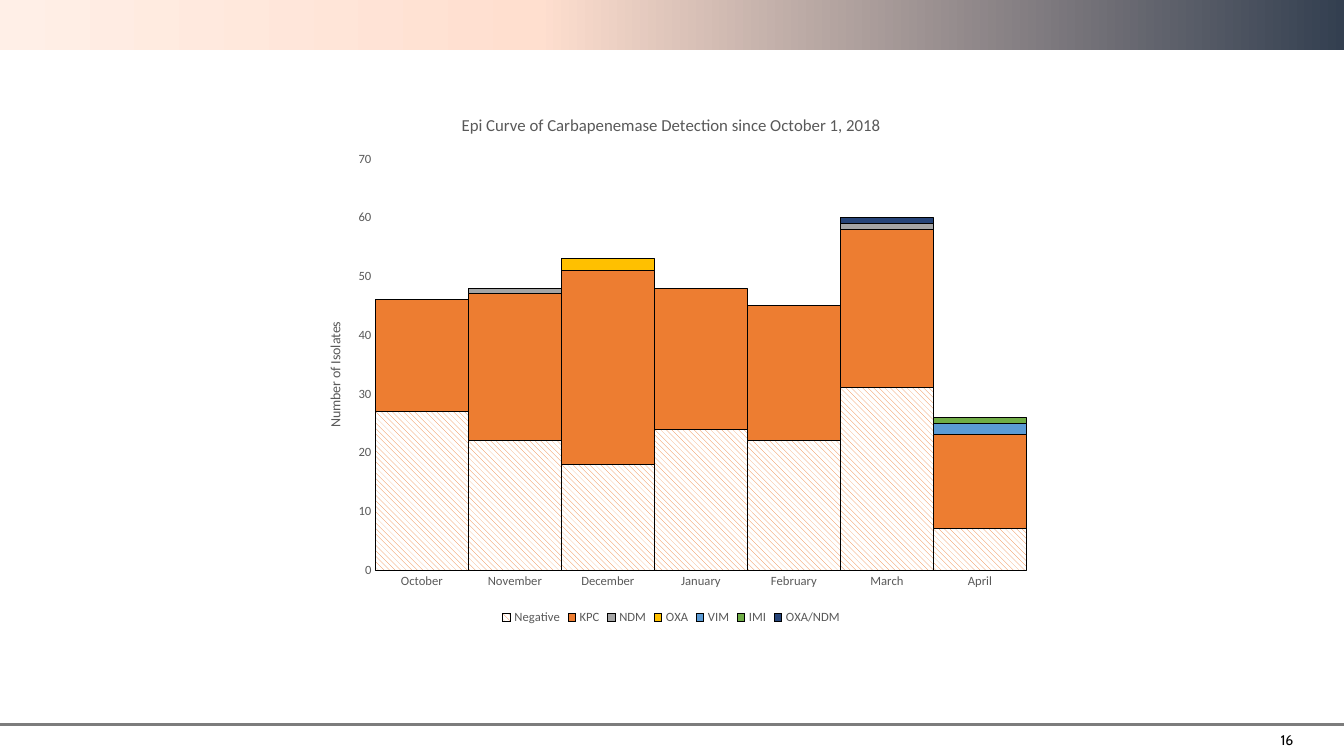
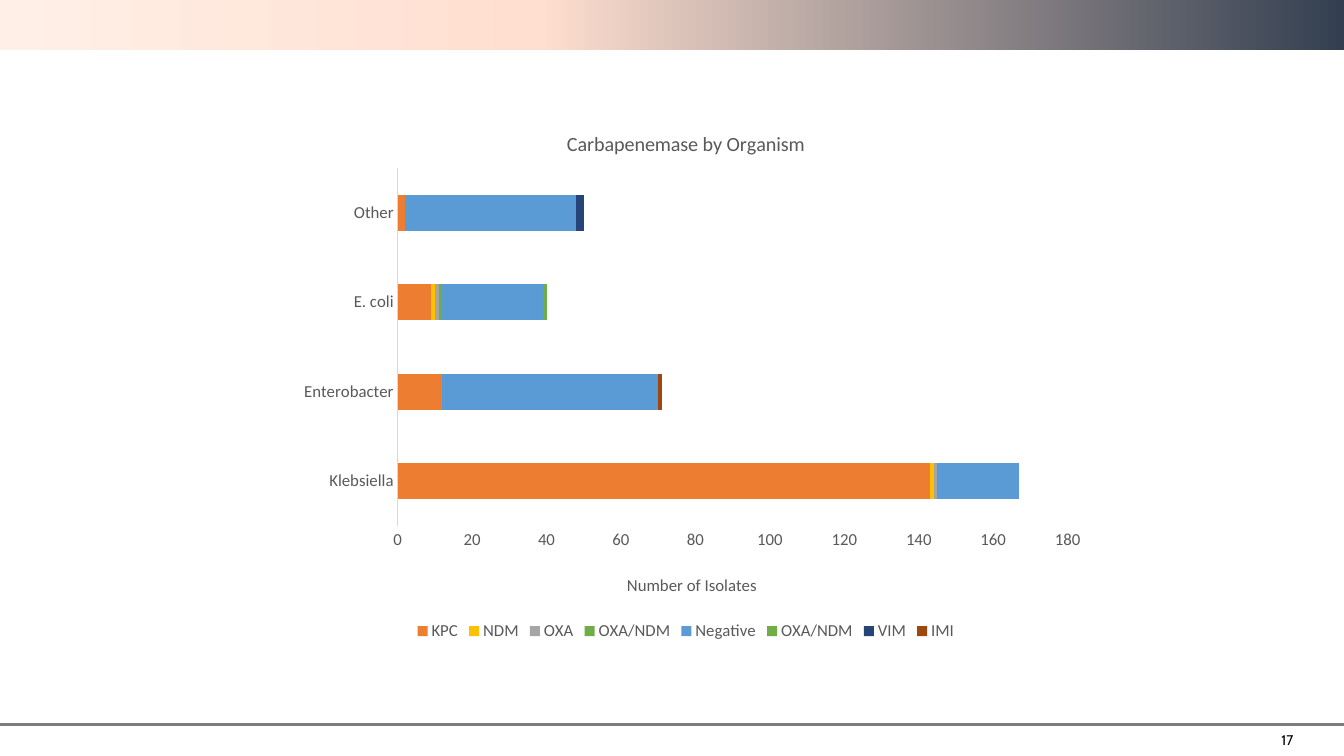
from copy import deepcopy

from lxml import etree
from pptx import Presentation
from pptx import util as u
from pptx.chart import data
from pptx.dml import color
from pptx.enum import chart as ch, dml, shapes, text
from pptx.oxml import ns

Pt, RGB = u.Pt, color.RGBColor

NAVY, PEACH, PALE = RGB(0x33, 0x3F, 0x50), RGB(0xFF, 0xDF, 0xCF), RGB(0xFF, 0xEF, 0xE7)
RULE_GRAY, TEXT_GRAY, AXIS_GRAY = RGB(0x7C, 0x7C, 0x7C), RGB(0x59, 0x59, 0x59), RGB(0xD9, 0xD9, 0xD9)
BLACK, WHITE = RGB(0, 0, 0), RGB(0xFF, 0xFF, 0xFF)
ORANGE, GRAY, GOLD = RGB(0xED, 0x7D, 0x31), RGB(0xA5, 0xA5, 0xA5), RGB(0xFF, 0xC0, 0x00)
BLUE, GREEN = RGB(0x5B, 0x9B, 0xD5), RGB(0x70, 0xAD, 0x47)
DARK_BLUE, BROWN = RGB(0x26, 0x44, 0x78), RGB(0x9E, 0x48, 0x0E)
HATCH = "hatch"

SLIDE_W, SLIDE_H = 960, 540
FOOTER_Y = 517.7
BAND_STOPS = [(0, NAVY), (0.6, PEACH), (1, PALE)]

CHARTS = [
    {
        "page": 16,
        "title": "Epi Curve of Carbapenemase Detection since October 1, 2018",
        "kind": ch.XL_CHART_TYPE.COLUMN_STACKED,
        "box": (215.3, 67.7, 528.5, 381.6),
        "plot": (0.1, 0.12, 0.88, 0.77),
        "axis_title_at": (0.03, 0.42),
        "sizes": {"title": 12, "axis_title": 10, "labels": 9},
        "scale": (70, 10),
        "gap": 0,
        "outline": BLACK,
        "categories": ["October", "November", "December", "January", "February", "March", "April"],
        "series": [
            ("Negative", HATCH, [27, 22, 18, 24, 22, 31, 7]),
            ("KPC", ORANGE, [19, 25, 33, 24, 23, 27, 16]),
            ("NDM", GRAY, [0, 1, 0, 0, 0, 1, 0]),
            ("OXA", GOLD, [0, 0, 2, 0, 0, 0, 0]),
            ("VIM", BLUE, [0, 0, 0, 0, 0, 0, 2]),
            ("IMI", GREEN, [0, 0, 0, 0, 0, 0, 1]),
            ("OXA/NDM", DARK_BLUE, [0, 0, 0, 0, 0, 1, 0]),
        ],
    },
    {
        "page": 17,
        "title": "Carbapenemase by Organism",
        "kind": ch.XL_CHART_TYPE.BAR_STACKED,
        "box": (174.2, 79.2, 631.4, 381.6),
        "plot": (0.174, 0.107, 0.758, 0.67),
        "axis_title_at": (0.43, 0.86),
        "sizes": {"title": 14.4, "axis_title": 12, "labels": 12},
        "scale": (180, 20),
        "gap": 150,
        "outline": None,
        "categories": ["Klebsiella", "Enterobacter", "E. coli", "Other"],
        "series": [
            ("KPC", ORANGE, [143, 12, 9, 2]),
            ("NDM", GOLD, [1, None, 1, 0]),
            ("OXA", GRAY, [1, None, 1, 0]),
            ("OXA/NDM", GREEN, [None, None, 1, 0]),
            ("Negative", BLUE, [22, 58, 27, 46]),
            ("OXA/NDM", GREEN, [None, None, 1, 0]),
            ("VIM", DARK_BLUE, [0, 0, 0, 2]),
            ("IMI", BROWN, [0, 1, 0, 0]),
        ],
    },
]


def set_font(font, size, rgb=TEXT_GRAY, name="Calibri"):
    font.size, font.name, font.bold = Pt(size), name, False
    font.color.rgb = rgb


def set_title(title, words, size):
    paragraph = title.text_frame.paragraphs[0]
    paragraph.text = words
    set_font(paragraph.font, size)


def place(parent, index, fractions):
    for old in parent.findall(ns.qn("c:layout")):
        parent.remove(old)
    layout = etree.Element(ns.qn("c:layout"))
    manual = etree.SubElement(layout, ns.qn("c:manualLayout"))
    settings = [("xMode", "edge"), ("yMode", "edge")] + list(zip("xywh", fractions))
    if len(fractions) == 4:
        settings.insert(0, ("layoutTarget", "inner"))
    for tag, value in settings:
        etree.SubElement(manual, ns.qn("c:" + tag)).set("val", str(value))
    parent.insert(index, layout)


def add_frame(slide, page):
    band = slide.shapes.add_shape(shapes.MSO_SHAPE.RECTANGLE, 0, 0, Pt(SLIDE_W), Pt(36))
    band.shadow.inherit = False
    band.line.fill.background()
    band.fill.gradient()
    band.fill.gradient_angle = 180
    stop_list = next(band._element.iter(ns.qn("a:gsLst")))
    stop_list.append(deepcopy(stop_list[-1]))
    for stop, (position, rgb) in zip(band.fill.gradient_stops, BAND_STOPS):
        stop.position = position
        stop.color.rgb = rgb

    rule = slide.shapes.add_connector(
        shapes.MSO_CONNECTOR.STRAIGHT, 0, Pt(FOOTER_Y), Pt(SLIDE_W), Pt(FOOTER_Y))
    rule.line.color.rgb = RULE_GRAY
    rule.line.width = Pt(2.25)
    etree.SubElement(rule._element.spPr, ns.qn("a:effectLst"))

    number = slide.shapes.add_textbox(Pt(871.9), Pt(FOOTER_Y), Pt(59), Pt(22.3)).text_frame
    number.word_wrap = True
    number.vertical_anchor = text.MSO_ANCHOR.MIDDLE
    paragraph = number.paragraphs[0]
    paragraph.text = str(page)
    paragraph.alignment = text.PP_ALIGN.RIGHT
    set_font(paragraph.font, 10, BLACK, "Cabin")


def style_axes(chart, content):
    sizes = content["sizes"]
    months_or_organisms, isolates = chart.category_axis, chart.value_axis
    for axis in (months_or_organisms, isolates):
        axis.major_tick_mark = axis.minor_tick_mark = ch.XL_TICK_MARK.NONE
        axis.has_major_gridlines = False
        set_font(axis.tick_labels.font, sizes["labels"])
    months_or_organisms.format.line.color.rgb = AXIS_GRAY
    months_or_organisms.format.line.width = Pt(0.75)
    isolates.format.line.fill.background()
    isolates.minimum_scale = 0
    isolates.maximum_scale, isolates.major_unit = content["scale"]
    set_title(isolates.axis_title, "Number of Isolates", sizes["axis_title"])
    place(isolates.axis_title._element, 1, content["axis_title_at"])


def style_series(plot, content):
    plot.gap_width, plot.overlap = content["gap"], 100
    plot.vary_by_categories = False
    for series, (_, paint, _) in zip(plot.series, content["series"]):
        series.invert_if_negative = False
        fill, line = series.format.fill, series.format.line
        if paint == HATCH:
            fill.patterned()
            fill.pattern = dml.MSO_PATTERN.WIDE_DOWNWARD_DIAGONAL
            fill.fore_color.rgb, fill.back_color.rgb = ORANGE, WHITE
        else:
            fill.solid()
            fill.fore_color.rgb = paint
        if content["outline"] is None:
            line.fill.background()
        else:
            line.color.rgb = content["outline"]
            line.width = Pt(0.75)


def add_isolate_chart(slide, content):
    counts = data.CategoryChartData()
    counts.categories = content["categories"]
    for name, _, values in content["series"]:
        counts.add_series(name, values)
    box = [Pt(length) for length in content["box"]]
    chart = slide.shapes.add_chart(content["kind"], *box, counts).chart
    set_font(chart.font, content["sizes"]["labels"])
    chart.has_title = True
    set_title(chart.chart_title, content["title"], content["sizes"]["title"])
    chart.has_legend = True
    chart.legend.position = ch.XL_LEGEND_POSITION.BOTTOM
    chart.legend.include_in_layout = False
    set_font(chart.legend.font, content["sizes"]["labels"])
    style_axes(chart, content)
    style_series(chart.plots[0], content)
    place(next(chart._chartSpace.iter(ns.qn("c:plotArea"))), 0, content["plot"])


def main():
    deck = Presentation()
    deck.slide_width, deck.slide_height = Pt(SLIDE_W), Pt(SLIDE_H)
    blank = deck.slide_layouts[6]
    for content in CHARTS:
        slide = deck.slides.add_slide(blank)
        add_frame(slide, content["page"])
        add_isolate_chart(slide, content)
    deck.save("out.pptx")


if __name__ == "__main__":
    main()
